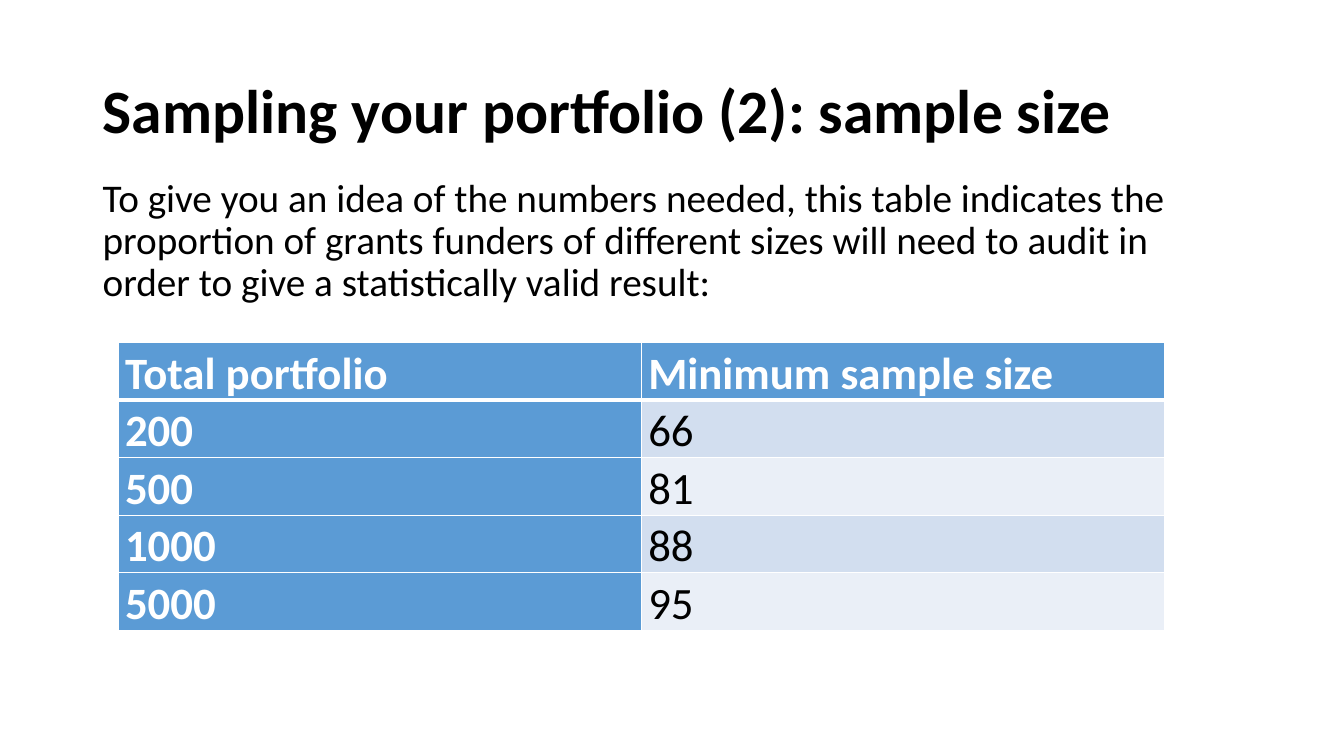
import dataclasses

import lxml.etree
import pptx
import pptx.dml.color
import pptx.enum.text
import pptx.oxml.ns
import pptx.util

PX = 9144  # EMU in one px, 100 px to the inch
FONT = "Calibri"
COLORS = {
    "text": "000000",
    "white": "FFFFFF",
    "header": "5B9BD5",
    "dark_band": "D2DEEF",
    "light_band": "EAEFF7",
}
TITLE = "Sampling your portfolio (2): sample size"
INTRO = (
    "To give you an idea of the numbers needed, this table indicates the "
    "proportion of grants funders of different sizes will need to audit in "
    "order to give a statistically valid result:"
)
ROWS = [
    ("Total portfolio", "Minimum sample size"),
    ("200", "66"),
    ("500", "81"),
    ("1000", "88"),
    ("5000", "95"),
]


@dataclasses.dataclass(frozen=True)
class Area:
    left: int
    top: int
    width: int
    height: int

    def emu(self) -> list[int]:
        return [length * PX for length in dataclasses.astuple(self)]


@dataclasses.dataclass(frozen=True)
class Style:
    size: int
    color: str = "text"
    bold: bool = False
    line_spacing: float = 0.9
    space_before: int = 0


TITLE_AREA = Area(92, 40, 1150, 145)
INTRO_AREA = Area(92, 172, 1150, 503)
TABLE_AREA = Area(117, 340, 1038, 285)


def rgb(name: str) -> pptx.dml.color.RGBColor:
    return pptx.dml.color.RGBColor.from_string(COLORS[name])


def write(frame: pptx.text.text.TextFrame, text: str, style: Style) -> None:
    frame.text = text
    frame.word_wrap = True
    para = frame.paragraphs[0]
    para.alignment = pptx.enum.text.PP_ALIGN.LEFT
    para.line_spacing = style.line_spacing
    para.space_before = pptx.util.Pt(style.space_before)
    for span in para.runs:
        span.font.name = FONT
        span.font.size = pptx.util.Pt(style.size)
        span.font.bold = style.bold
        span.font.color.rgb = rgb(style.color)


def set_borders(cell: pptx.table._Cell, top: int, bottom: int) -> None:
    """Draw white borders, with widths in points; they precede the fill."""
    properties = cell._tc.get_or_add_tcPr()
    widths = {"a:lnL": 1, "a:lnR": 1, "a:lnT": top, "a:lnB": bottom}
    for index, (tag, width) in enumerate(widths.items()):
        line = lxml.etree.Element(pptx.oxml.ns.qn(tag), w=str(pptx.util.Pt(width)))
        fill = lxml.etree.SubElement(line, pptx.oxml.ns.qn("a:solidFill"))
        lxml.etree.SubElement(fill, pptx.oxml.ns.qn("a:srgbClr"), val=COLORS["white"])
        properties.insert(index, line)


def add_sample_table(page: pptx.slide.Slide) -> None:
    table = page.shapes.add_table(len(ROWS), len(ROWS[0]), *TABLE_AREA.emu()).table
    table.horz_banding = False
    table.first_col = True
    for row, values in enumerate(ROWS):
        for column, value in enumerate(values):
            cell = table.cell(row, column)
            heading = row == 0 or column == 0
            band = "dark_band" if row % 2 else "light_band"
            cell.margin_left = cell.margin_right = 7 * PX
            cell.margin_top = cell.margin_bottom = 0
            color = "white" if heading else "text"
            write(cell.text_frame, value, Style(32, color, heading, 1.07))
            cell.fill.solid()
            cell.fill.fore_color.rgb = rgb("header" if heading else band)
            set_borders(cell, top=3 if row == 1 else 1, bottom=3 if row == 0 else 1)


def main() -> None:
    deck = pptx.Presentation()
    deck.slide_width, deck.slide_height = 1333 * PX, 750 * PX
    page = deck.slides.add_slide(deck.slide_layouts.get_by_name("Title Only"))

    # Title
    title = page.shapes.title
    title.left, title.top, title.width, title.height = TITLE_AREA.emu()
    write(title.text_frame, TITLE, Style(44, bold=True))
    title.text_frame.auto_size = pptx.enum.text.MSO_AUTO_SIZE.NONE
    title.text_frame.vertical_anchor = pptx.enum.text.MSO_ANCHOR.MIDDLE

    # Introduction
    box = page.shapes.add_textbox(*INTRO_AREA.emu())
    write(box.text_frame, INTRO, Style(28, space_before=10))

    # Sample sizes
    add_sample_table(page)

    deck.save("out.pptx")


if __name__ == "__main__":
    main()
